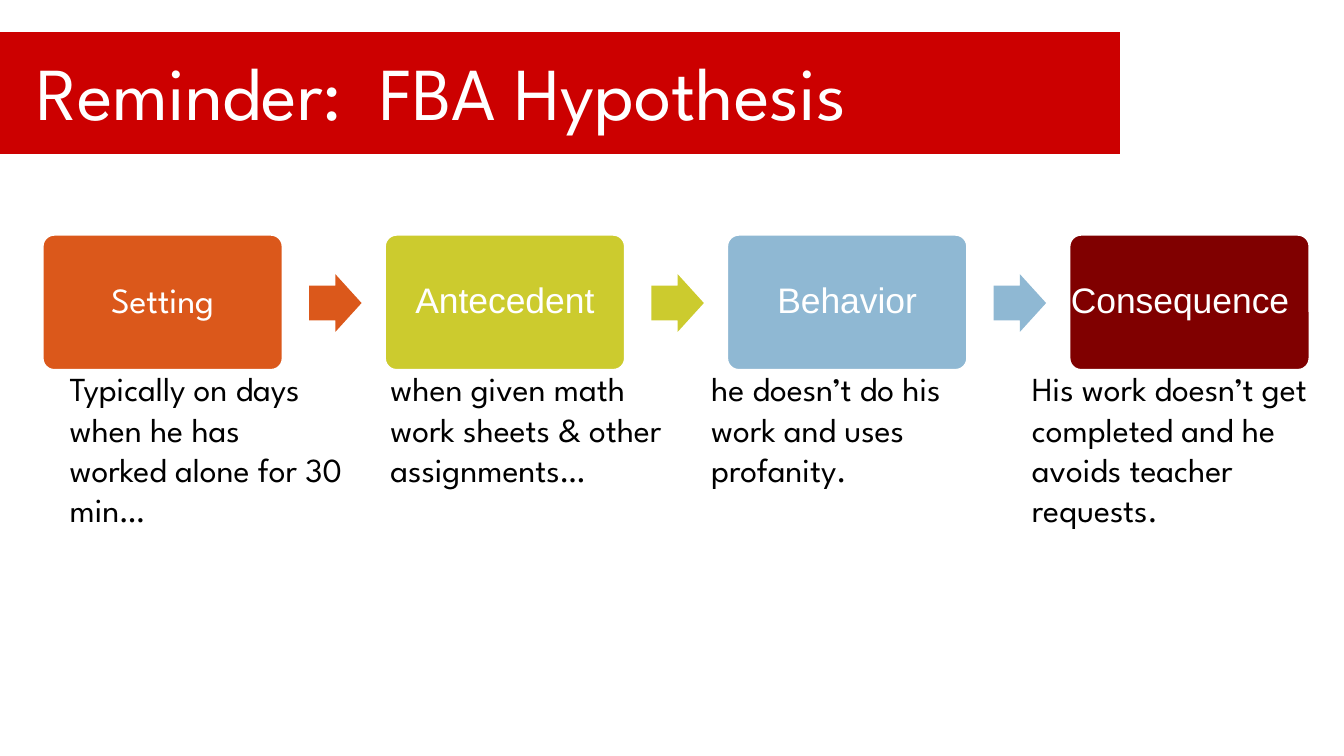
"""Build the FBA hypothesis slide: a four-step chain with an example under each step."""
import pptx
import pptx.util
import pptx.dml.color
import pptx.enum.shapes
import pptx.enum.text

Inches = pptx.util.Inches
Pt = pptx.util.Pt
Kind = pptx.enum.shapes.MSO_SHAPE
Anchor = pptx.enum.text.MSO_ANCHOR
Align = pptx.enum.text.PP_ALIGN

TITLE = "Reminder:  FBA Hypothesis"
STEPS = [
    ("Setting", "main", "orange", (0.08, 0.08),
     "Typically on days when he has worked alone for 30 min…", (2.23, 1.62)),
    ("Antecedent", "plain", "lime", (0.08, 0.08),
     "when given math work sheets & other assignments…", (2.25, 1.31)),
    ("Behavior", "plain", "blue", (0.08, 0.08),
     "he doesn’t do his work and uses profanity.", (2.25, 1.01)),
    ("Consequence", "plain", "maroon", (0, 0.14),
     "His work doesn’t get completed and he avoids teacher requests.", (2.25, 1.62)),
]
THEME = {
    "main": "League Spartan", "plain": "Arial",
    "title": 40, "label": 19, "body": 18,
    "red": "CC0000", "orange": "DB581B", "lime": "CCCB2E", "blue": "8FB8D3",
    "maroon": "800000", "white": "FFFFFF", "black": "000000",
}
WIDE = Inches(10)
BOX = (0.3, 1.73, 1.82, 1.04)
ARROW = (2.3, 2.04, 0.39, 0.43)
NOTE = (0.42, 2.69)
LAST = len(STEPS) - 1
STEP = (7.94 - BOX[0]) / LAST
PITCH = (7.58 - NOTE[0]) / LAST


def color(name):
    """Return a theme colour."""
    return pptx.dml.color.RGBColor.from_string(THEME[name])


def draw(slide, kind, spot, fill, edge=0, adjust=()):
    """Add a filled shape, with a white edge when a width is given."""
    shape = slide.shapes.add_shape(kind, *map(Inches, spot))
    shape.shadow.inherit = False
    shape.fill.solid()
    shape.fill.fore_color.rgb = color(fill)
    if edge:
        shape.line.color.rgb = color("white")
        shape.line.width = Pt(edge)
    else:
        shape.line.fill.background()
    for i, value in enumerate(adjust):
        shape.adjustments[i] = value
    return shape


def write(shape, text, font, size, ink, anchor, align, sides=(0.1, 0.1), wrap=True):
    """Write one styled run into a shape and return its paragraph."""
    frame = shape.text_frame
    frame.word_wrap = wrap
    frame.vertical_anchor = anchor
    frame.margin_left, frame.margin_right = map(Inches, sides)
    para = frame.paragraphs[0]
    para.alignment = align
    run = para.add_run()
    run.text = text
    run.font.name = THEME[font]
    run.font.size = Pt(THEME[size])
    run.font.color.rgb = color(ink)
    return para


def main():
    """Lay out the title band, the chain and the examples."""
    deck = pptx.Presentation()
    deck.slide_width, deck.slide_height = WIDE, WIDE * 9 // 16
    slide = deck.slides.add_slide(deck.slide_layouts[6])

    draw(slide, Kind.RECTANGLE, (-0.08, 0.23, 8.42, 0.92), "red", 0.75)
    title = slide.shapes.add_textbox(*map(Inches, (0.17, 0.27, 8.17, 0.81)))
    write(title, TITLE, "main", "title", "white", Anchor.MIDDLE, Align.LEFT)

    for i, (label, font, fill, sides, note, size) in enumerate(STEPS):
        left, *rest = BOX
        box = draw(slide, Kind.ROUNDED_RECTANGLE, (left + i * STEP, *rest), fill, 3.5, [0.1])
        para = write(box, label, font, "label", "white", Anchor.MIDDLE, Align.CENTER, sides, False)
        para.line_spacing = 0.9
        if i < LAST:
            left, *rest = ARROW
            draw(slide, Kind.RIGHT_ARROW, (left + i * STEP, *rest), fill, adjust=[0.6, 0.5])
        left, top = NOTE
        text = slide.shapes.add_textbox(*map(Inches, (left + i * PITCH, top, *size)))
        write(text, note, "main", "body", "black", Anchor.TOP, Align.LEFT)

    deck.save("out.pptx")


if __name__ == "__main__":
    main()
